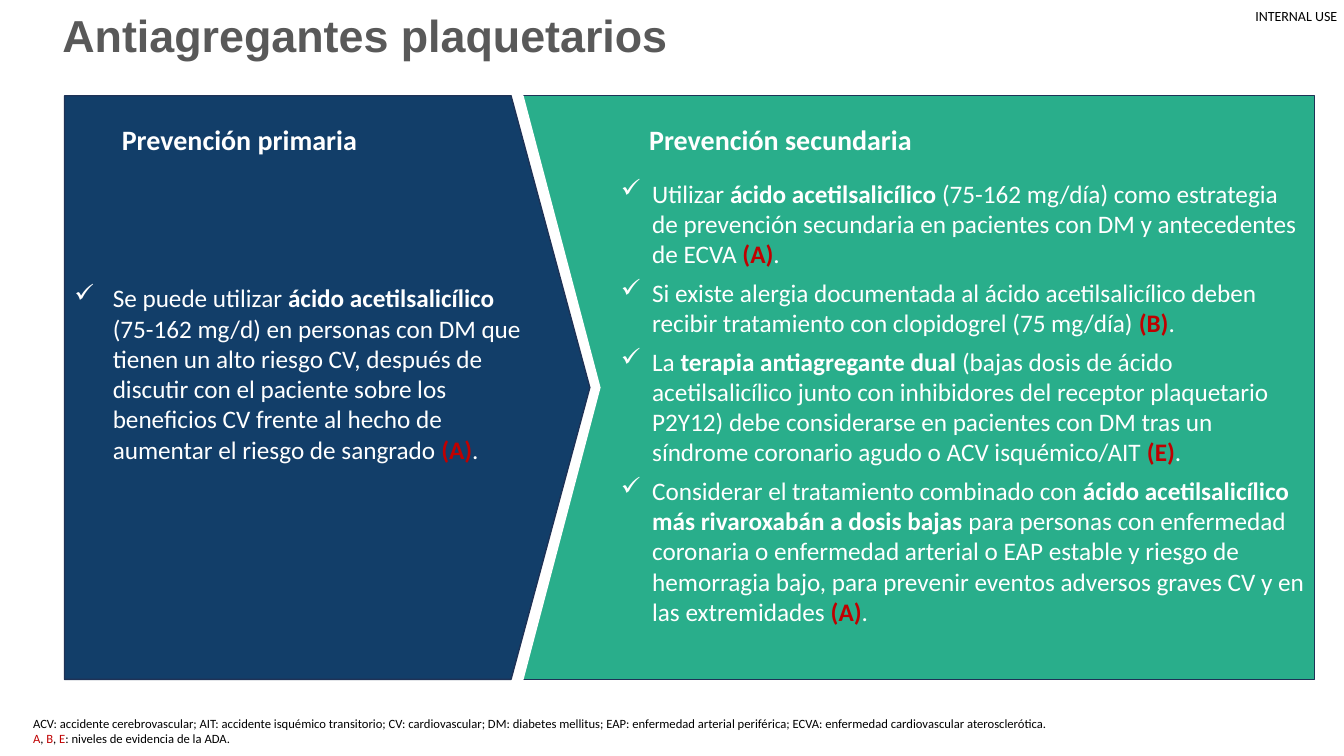
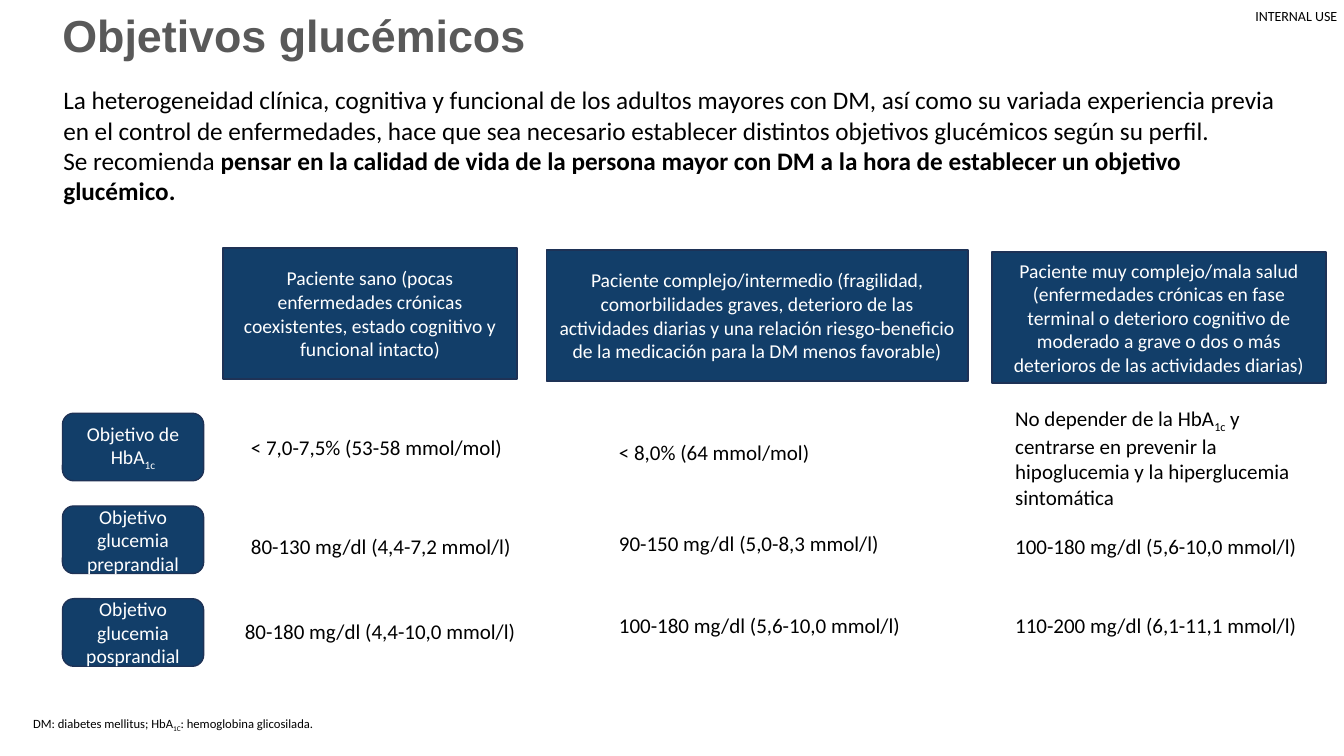
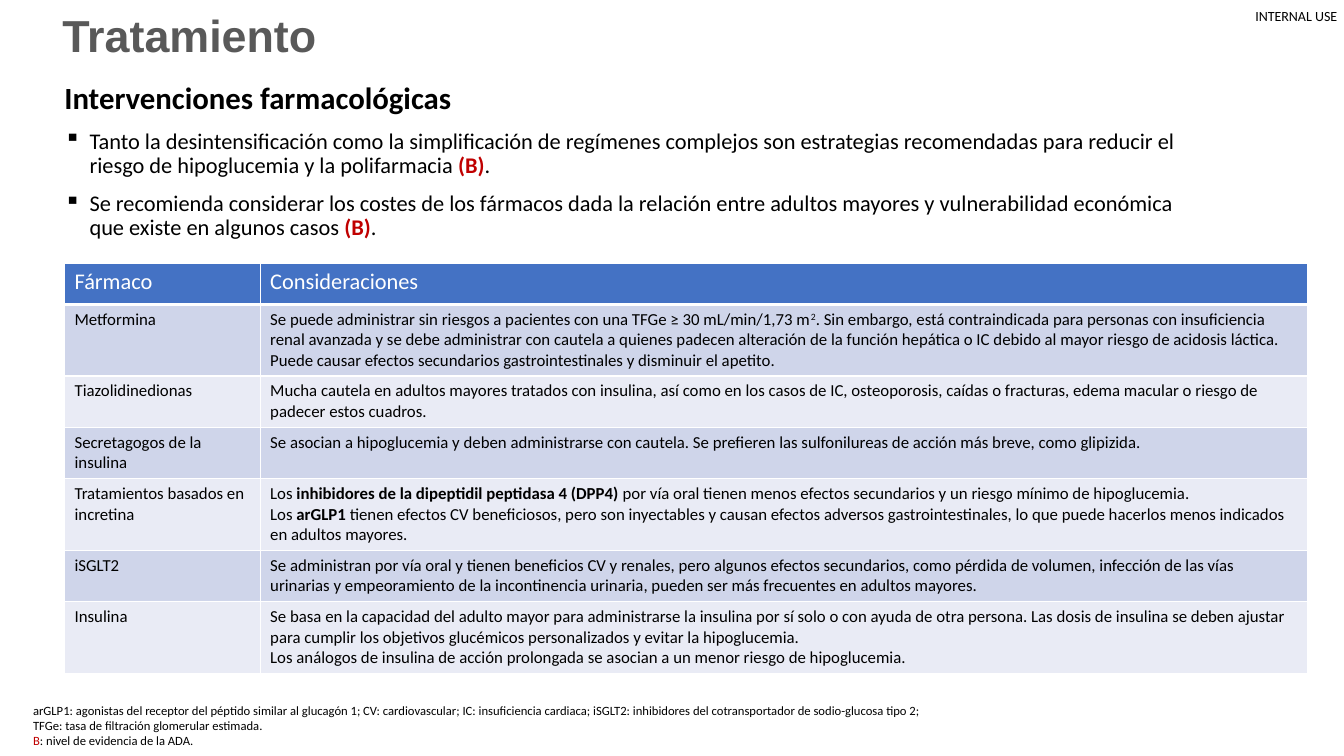
import pptx
import pptx.util
import pptx.dml.color
import pptx.enum.shapes
import pptx.enum.text
import pptx.oxml
import pptx.oxml.ns
from pptx.util import Inches

RGBColor = pptx.dml.color.RGBColor
SHAPES = pptx.enum.shapes.MSO_SHAPE
ALIGN = pptx.enum.text.PP_ALIGN
ANCHOR = pptx.enum.text.MSO_ANCHOR

NAVY = RGBColor(0x12, 0x3E, 0x69)
OUTLINE = RGBColor(0x1E, 0x32, 0x56)
GREEN = RGBColor(0x29, 0xAE, 0x8B)
RED = RGBColor(0xC0, 0x00, 0x00)
GREY = RGBColor(0x59, 0x59, 0x59)
BLACK = RGBColor(0x00, 0x00, 0x00)
WHITE = RGBColor(0xFF, 0xFF, 0xFF)
TABLE_HEAD = RGBColor(0x44, 0x72, 0xC4)
BANDS = (RGBColor(0xE9, 0xEB, 0xF5), RGBColor(0xCF, 0xD5, 0xEA))


def strong(text):
    return text, {"bold": True}


def grade(letter):
    return f"({letter})", {"bold": True, "color": RED}


def red(text):
    return text, {"color": RED}


def shifted(text, percent):
    return text, {"baseline": percent * 1000}


class Slides:
    """Holds the deck, its style and the current page."""

    def __init__(self):
        self.deck = pptx.Presentation()
        self.deck.slide_width = Inches(13.33)
        self.deck.slide_height = Inches(7.5)
        self.page = None

    def new_page(self, title):
        self.page = self.deck.slides.add_slide(self.deck.slide_layouts[6])
        self.text((12.45, 0.07, 0.85, 0.17), ["INTERNAL USE"], size=10, insets=(0, 0, 0, 0))
        self.text((0.52, 0, 11.54, 0.76), [title], size=32, name="Arial", color=GREY,
                  bold=True, line=0.9, anchor=ANCHOR.MIDDLE)

    def paragraphs(self, frame, paragraphs, **style):
        for number, spans in enumerate(paragraphs):
            para = frame.paragraphs[0] if number == 0 else frame.add_paragraph()
            self.paragraph(para, spans, first=number == 0, **style)

    def paragraph(self, para, spans, first=True, size=18, name="Calibri", color=BLACK,
                  bold=False, align=ALIGN.LEFT, line=None, before=0, after=0,
                  bullet=None, left=0, hang=0):
        if bullet:
            properties = para._p.get_or_add_pPr()
            properties.set("marL", str(Inches(left)))
            properties.set("indent", str(-Inches(hang)))
            mark = pptx.oxml.parse_xml(f'<a:buChar {pptx.oxml.ns.nsdecls("a")} char="{bullet}"/>')
            properties.append(mark)
        layout = {"alignment": align, "line_spacing": line,
                  "space_before": pptx.util.Pt(0 if first else before),
                  "space_after": pptx.util.Pt(after)}
        for key, value in layout.items():
            setattr(para, key, value)
        for item in [spans] if isinstance(spans, str) else spans:
            text, special = (item, {}) if isinstance(item, str) else item
            for number, piece in enumerate(text.split("\n")):
                if number:
                    para.add_line_break()
                if not piece:
                    continue
                span = para.add_run()
                span.text = piece
                font = {"size": pptx.util.Pt(size), "name": name,
                        "bold": special.get("bold", bold)}
                for key, value in font.items():
                    setattr(span.font, key, value)
                span.font.color.rgb = special.get("color", color)
                if "baseline" in special:
                    span._r.get_or_add_rPr().set("baseline", str(special["baseline"]))

    def prepare(self, frame, anchor, insets):
        sides = ("margin_left", "margin_top", "margin_right", "margin_bottom")
        values = dict(zip(sides, map(Inches, insets)), word_wrap=True, vertical_anchor=anchor)
        for key, value in values.items():
            setattr(frame, key, value)

    def text(self, place, paragraphs, anchor=ANCHOR.TOP, insets=(0.1, 0.05, 0.1, 0.05), **style):
        box = self.page.shapes.add_textbox(*map(Inches, place))
        self.prepare(box.text_frame, anchor, insets)
        self.paragraphs(box.text_frame, paragraphs, **style)

    def shape(self, kind, place, paragraphs=(), fill=NAVY, outline=OUTLINE, adjust=None,
              insets=(0.1, 0.05, 0.1, 0.05), **style):
        shape = self.page.shapes.add_shape(kind, *map(Inches, place))
        shape.shadow.inherit = False
        if adjust is not None:
            shape.adjustments[0] = adjust
        shape.fill.solid()
        shape.fill.fore_color.rgb = fill
        shape.line.color.rgb = outline
        shape.line.width = pptx.util.Pt(1)
        self.prepare(shape.text_frame, ANCHOR.MIDDLE, insets)
        self.paragraphs(shape.text_frame, paragraphs, color=WHITE, **style)

    def label(self, kind, place, spans):
        self.shape(kind, place, [spans], size=14, align=ALIGN.CENTER)

    def footnote(self, top, paragraphs):
        self.text((0.23, top, 10.5, 7.45 - top), paragraphs, size=9)

    def borders(self, cell, bottom):
        properties = cell._tc.get_or_add_tcPr()
        for side, width in (("L", 1), ("R", 1), ("T", 1), ("B", bottom)):
            properties.append(pptx.oxml.parse_xml(
                f'<a:ln{side} {pptx.oxml.ns.nsdecls("a")} w="{pptx.util.Pt(width)}">'
                f'<a:solidFill><a:srgbClr val="{WHITE}"/></a:solidFill></a:ln{side}>'))

    def table(self, place, widths, heights, rows):
        table = self.page.shapes.add_table(len(rows), len(widths), *map(Inches, place)).table
        table.horz_banding = False
        for column, width in zip(table.columns, widths):
            column.width = Inches(width)
        for number, (row, height, texts) in enumerate(zip(table.rows, heights, rows)):
            row.height = Inches(height)
            head = number == 0
            for cell, paragraphs in zip(row.cells, texts):
                self.borders(cell, 3 if head else 1)
                cell.fill.solid()
                cell.fill.fore_color.rgb = TABLE_HEAD if head else BANDS[number % 2]
                self.paragraphs(cell.text_frame, paragraphs, size=16 if head else 12,
                                color=WHITE if head else BLACK)


def antiplatelets(slides):
    slides.new_page("Antiagregantes plaquetarios")
    top, height = 0.95, 5.79

    # Secondary prevention panel, white gap and primary prevention arrow
    secondary = [
        ["Utilizar ", strong("ácido acetilsalicílico "),
         "(75-162 mg/día) como estrategia de prevención secundaria en pacientes con DM y "
         "antecedentes de ECVA ", grade("A"), "."],
        ["Si existe alergia documentada al ácido acetilsalicílico deben recibir tratamiento "
         "con clopidogrel (75 mg/día) ", grade("B"), "."],
        ["La ", strong("terapia antiagregante dual "),
         "(bajas dosis de ácido acetilsalicílico junto con inhibidores del receptor "
         "plaquetario P2Y12) debe considerarse en pacientes con DM tras un síndrome "
         "coronario agudo o ACV isquémico/AIT ", grade("E"), "."],
        ["Considerar el tratamiento combinado con ",
         strong("ácido acetilsalicílico más rivaroxabán a dosis bajas "),
         "para personas con enfermedad coronaria o enfermedad arterial o EAP estable y riesgo "
         "de hemorragia bajo, para prevenir eventos adversos graves CV y en las extremidades ",
         grade("A"), "."],
    ]
    primary = ["Se puede utilizar ", strong("ácido acetilsalicílico \n"),
               "(75-162 mg/d) en personas con DM que tienen un alto riesgo CV, después de "
               "discutir con el paciente sobre los beneficios CV frente al hecho de aumentar "
               "el riesgo de sangrado ", grade("A"), "."]
    slides.shape(SHAPES.CHEVRON, (5.08, top, 7.96, height), secondary, fill=GREEN, adjust=0,
                 insets=(0.1, 0.66, 0.1, 0.37), after=6, bullet="✓", left=1.29, hang=0.31)
    slides.shape(SHAPES.PENTAGON, (4.89, top, 1.06, height), fill=WHITE, outline=WHITE,
                 adjust=0.72)
    slides.shape(SHAPES.PENTAGON, (0.64, top, 5.21, height), [primary], adjust=0.15,
                 insets=(0.1, 0.05, 0.1, 0.33), bullet="✓", left=0.38, hang=0.38)

    # Panel headings
    for left, heading in ((1.11, "Prevención primaria"), (6.34, "Prevención secundaria")):
        slides.text((left, 1.2, 3.47, 0.41), [heading], size=20, bold=True, color=WHITE, line=0.9)

    slides.footnote(7.05, [
        "ACV: accidente cerebrovascular; AIT: accidente isquémico transitorio; CV: "
        "cardiovascular; DM: diabetes mellitus; EAP: enfermedad arterial periférica; ECVA: "
        "enfermedad cardiovascular aterosclerótica.",
        [red("A"), ",", red(" B"), ",", red(" E"), ": niveles de evidencia de la ADA."]])


def glucose_targets(slides):
    slides.new_page("Objetivos glucémicos")
    slides.text((0.53, 0.79, 12.27, 1.31), [[
        "La heterogeneidad clínica, cognitiva y funcional de los adultos mayores con DM, así "
        "como su variada experiencia previa en el control de enfermedades, hace que sea "
        "necesario establecer distintos objetivos glucémicos según su perfil.\nSe recomienda ",
        strong("pensar en la calidad de vida de la persona mayor con DM a la hora de "
               "establecer un objetivo glucémico.")]])

    # Patient profiles
    profiles = (
        (2.21, 2.46, 2.92, "Paciente sano (pocas enfermedades crónicas coexistentes, estado "
                           "cognitivo y funcional intacto)"),
        (5.42, 2.48, 4.18, "Paciente complejo/intermedio (fragilidad, comorbilidades graves, "
                           "deterioro de las actividades diarias y una relación "
                           "riesgo-beneficio de la medicación para la DM menos favorable)"),
        (9.84, 2.5, 3.31, "Paciente muy complejo/mala salud (enfermedades crónicas en fase "
                          "terminal o deterioro cognitivo de moderado a grave o dos o más "
                          "deterioros de las actividades diarias)"),
    )
    for left, top, width, profile in profiles:
        slides.label(SHAPES.RECTANGLE, (left, top, width, 1.3), profile)

    # Target names
    targets = (["Objetivo de HbA", shifted("1c", -25)],
               "Objetivo glucemia preprandial", "Objetivo glucemia posprandial")
    for row, target in enumerate(targets):
        slides.label(SHAPES.ROUNDED_RECTANGLE, (0.62, 4.1 + 0.92 * row, 1.4, 0.67), target)

    # Target values, one column per profile
    values = (
        (2.39, 4.26, "< 7,0-7,5% (53-58 mmol/mol)"),
        (2.39, 5.24, "80-130 mg/dl (4,4-7,2 mmol/l)"),
        (2.33, 6.09, "80-180 mg/dl (4,4-10,0 mmol/l)"),
        (6.04, 4.31, "< 8,0% (64 mmol/mol)"),
        (6.04, 5.21, "90-150 mg/dl (5,0-8,3 mmol/l)"),
        (6.04, 6.03, "100-180 mg/dl (5,6-10,0 mmol/l)"),
        (9.97, 3.97, ["No depender de la HbA", shifted("1c", -25),
                      " y centrarse en prevenir la hipoglucemia y la hiperglucemia "
                      "sintomática"]),
        (9.97, 5.24, "100-180 mg/dl (5,6-10,0 mmol/l)"),
        (9.97, 6.03, "110-200 mg/dl (6,1-11,1 mmol/l)"),
    )
    for left, top, value in values:
        slides.text((left, top, 3.19, 1.11 if top < 4 else 0.35), [value], size=15)

    slides.footnote(7.05, [["DM: diabetes mellitus; HbA", shifted("1C", -25),
                            ": hemoglobina glicosilada."]])


def treatment(slides):
    slides.new_page("Tratamiento")

    # Recommendations
    slides.text((0.54, 0.77, 11.5, 0.45), ["Intervenciones farmacológicas"], size=22,
                bold=True, line=0.9)
    slides.text((0.54, 1.24, 11.5, 1.3), [
        ["Tanto la desintensificación como la simplificación de regímenes complejos son "
         "estrategias recomendadas para reducir el riesgo de hipoglucemia y la polifarmacia ",
         grade("B"), "."],
        ["Se recomienda considerar los costes de los fármacos dada la relación entre adultos "
         "mayores y vulnerabilidad económica que existe en algunos casos ", grade("B"), "."],
    ], size=16, line=0.9, before=10, bullet="▪", left=0.25, hang=0.25)

    # Drug table: each cell is a list of paragraphs
    rows = [
        (["Fármaco"], ["Consideraciones"]),
        (["Metformina"],
         [["Se puede administrar sin riesgos a pacientes con una TFGe ≥ 30 mL/min/1,73 m",
           shifted("2", 30),
           ". Sin embargo, está contraindicada para personas con insuficiencia renal avanzada "
           "y se debe administrar con cautela a quienes padecen alteración de la función "
           "hepática o IC debido al mayor riesgo de acidosis láctica."],
          "Puede causar efectos secundarios gastrointestinales y disminuir el apetito."]),
        (["Tiazolidinedionas"],
         ["Mucha cautela en adultos mayores tratados con insulina, así como en los casos de "
          "IC, osteoporosis, caídas o fracturas, edema macular o riesgo de padecer estos "
          "cuadros."]),
        (["Secretagogos de la insulina"],
         ["Se asocian a hipoglucemia y deben administrarse con cautela. Se prefieren las "
          "sulfonilureas de acción más breve, como glipizida."]),
        (["Tratamientos basados en", "incretina"],
         [["Los ", strong("inhibidores de la dipeptidil peptidasa 4 (DPP4) "),
           "por vía oral tienen menos efectos secundarios y un riesgo mínimo de hipoglucemia."],
          ["Los ", strong("arGLP1"),
           " tienen efectos CV beneficiosos, pero son inyectables y causan efectos adversos "
           "gastrointestinales, lo que puede hacerlos menos indicados en adultos mayores."]]),
        (["iSGLT2"],
         ["Se administran por vía oral y tienen beneficios CV y renales, pero algunos efectos "
          "secundarios, como pérdida de volumen, infección de las vías urinarias y "
          "empeoramiento de la incontinencia urinaria, pueden ser más frecuentes en adultos "
          "mayores."]),
        (["Insulina"],
         ["Se basa en la capacidad del adulto mayor para administrarse la insulina por sí solo "
          "o con ayuda de otra persona. Las dosis de insulina se deben ajustar para cumplir "
          "los objetivos glucémicos personalizados y evitar la hipoglucemia.",
          "Los análogos de insulina de acción prolongada se asocian a un menor riesgo de "
          "hipoglucemia."]),
    ]
    heights = (0.41, 0.71, 0.51, 0.51, 0.71, 0.51, 0.71)
    slides.table((0.64, 2.61, 12.33, sum(heights)), (1.94, 10.39), heights, rows)

    slides.footnote(6.92, [
        "arGLP1: agonistas del receptor del péptido similar al glucagón 1; CV: cardiovascular; "
        "IC: insuficiencia cardiaca; iSGLT2: inhibidores del cotransportador de sodio-glucosa "
        "tipo 2;\nTFGe: tasa de filtración glomerular estimada.",
        [red("B"), ": nivel de evidencia de la ADA."]])


def main():
    slides = Slides()
    antiplatelets(slides)
    glucose_targets(slides)
    treatment(slides)
    slides.deck.save("out.pptx")


if __name__ == "__main__":
    main()
